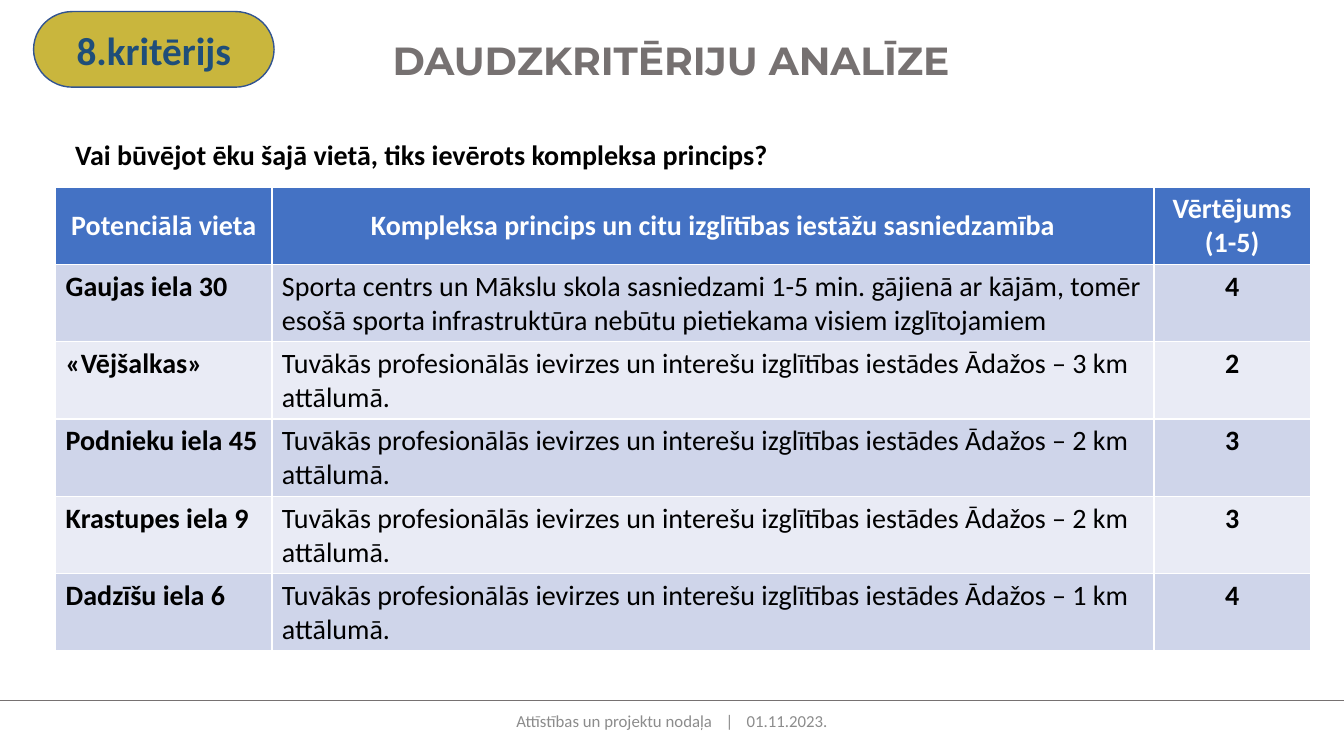
from pptx import Presentation
from pptx.dml.color import RGBColor
from pptx.enum.shapes import MSO_CONNECTOR as Connector, MSO_SHAPE as Shape
from pptx.enum.text import MSO_ANCHOR as Anchor, PP_ALIGN as Align
from pptx.oxml.ns import qn
from pptx.util import Emu, Pt

color = RGBColor.from_string
GREY = "767171"


def px(*lengths):
    return [Emu(length * 9525) for length in lengths]


def write(frame, text, size=20, font="Calibri", ink="000000", bold=True,
          align=Align.LEFT, anchor=Anchor.TOP, tracking=0):
    frame.word_wrap = True
    frame.vertical_anchor = anchor
    paragraph = frame.paragraphs[0]
    paragraph.alignment = align
    run = paragraph.add_run()
    run.text = text
    run.font.size = Pt(size)
    run.font.name = font
    run.font.bold = bold
    run.font.color.rgb = color(ink)
    if tracking:
        run.font._element.set("spc", str(tracking))
    return paragraph


deck = Presentation()
deck.slide_width, deck.slide_height = px(1280, 720)
slide = deck.slides.add_slide(deck.slide_layouts[6])
shapes = slide.shapes

# Footer: the tracked divider keeps department and date apart
footer = shapes.add_textbox(*px(424, 667, 432, 38)).text_frame
for part, tracking in (("Attīstības un projektu nodaļa", 0), (" |", 680), (" 01.11.2023.", 0)):
    write(footer, part, size=12, ink="8C8C8C", bold=False,
          align=Align.CENTER, anchor=Anchor.MIDDLE, tracking=tracking)

footer_rule = shapes.add_connector(Connector.STRAIGHT, *px(0, 667, 1280, 667))
footer_rule.line.color.rgb = color(GREY)
footer_rule.line.width = Pt(0.5)
properties = footer_rule._element.spPr
properties.append(properties.makeelement(qn("a:effectLst"), {}))

# Title and question
title = shapes.add_textbox(*px(42, 30, 1194, 55)).text_frame
write(title, "DAUDZKRITĒRIJU ANALĪZE", size=28, font="Montserrat", ink=GREY, align=Align.CENTER)

question = shapes.add_textbox(*px(62, 130, 1175, 33)).text_frame
write(question, "Vai būvējot ēku šajā vietā, tiks ievērots kompleksa princips?").line_spacing = 0.9

# Table of sites and their scores
NEARBY = "Tuvākās profesionālās ievirzes un interešu izglītības iestādes Ādažos – {} km attālumā."
headings = ("Potenciālā vieta", "Kompleksa princips un citu izglītības iestāžu sasniedzamība",
            "Vērtējums (1-5)")
sites = (
    ("Gaujas iela 30", "Sporta centrs un Mākslu skola sasniedzami 1-5 min. gājienā ar kājām, "
     "tomēr esošā sporta infrastruktūra nebūtu pietiekama visiem izglītojamiem", "4"),
    ("«Vējšalkas»", NEARBY.format(3), "2"),
    ("Podnieku iela 45", NEARBY.format(2), "3"),
    ("Krastupes iela 9", NEARBY.format(2), "3"),
    ("Dadzīšu iela 6", NEARBY.format(1), "4"),
)
widths = px(206, 840, 149)
row_height, = px(73)
rows = (headings, *sites)
scores = shapes.add_table(len(rows), len(widths), *px(53, 178), sum(widths),
                          row_height * len(rows)).table
for column, width in zip(scores.columns, widths):
    column.width = width
for r, row in enumerate(rows):
    scores.rows[r].height = row_height
    header = r == 0
    for c, text in enumerate(row):
        cell = scores.cell(r, c)
        cell.fill.solid()
        cell.fill.fore_color.rgb = color("4472C4" if header else ("E9EBF5", "CFD5EA")[r % 2])
        write(cell.text_frame, text, ink="FFFFFF" if header else "000000",
              bold=header or c != 1, align=Align.CENTER if header or c == 2 else Align.LEFT)
        cell.vertical_anchor = Anchor.MIDDLE if header else Anchor.TOP

# Criterion badge
badge = shapes.add_shape(Shape.FLOWCHART_TERMINATOR, *px(32, 11, 229, 72))
badge.shadow.inherit = False
badge.fill.solid()
badge.fill.fore_color.rgb = color("C9B63D")
badge.line.color.rgb = color("325491")
badge.line.width = Pt(1)
write(badge.text_frame, "8.kritērijs", size=28, ink="1F4E79",
      align=Align.CENTER, anchor=Anchor.MIDDLE)

deck.save("out.pptx")
